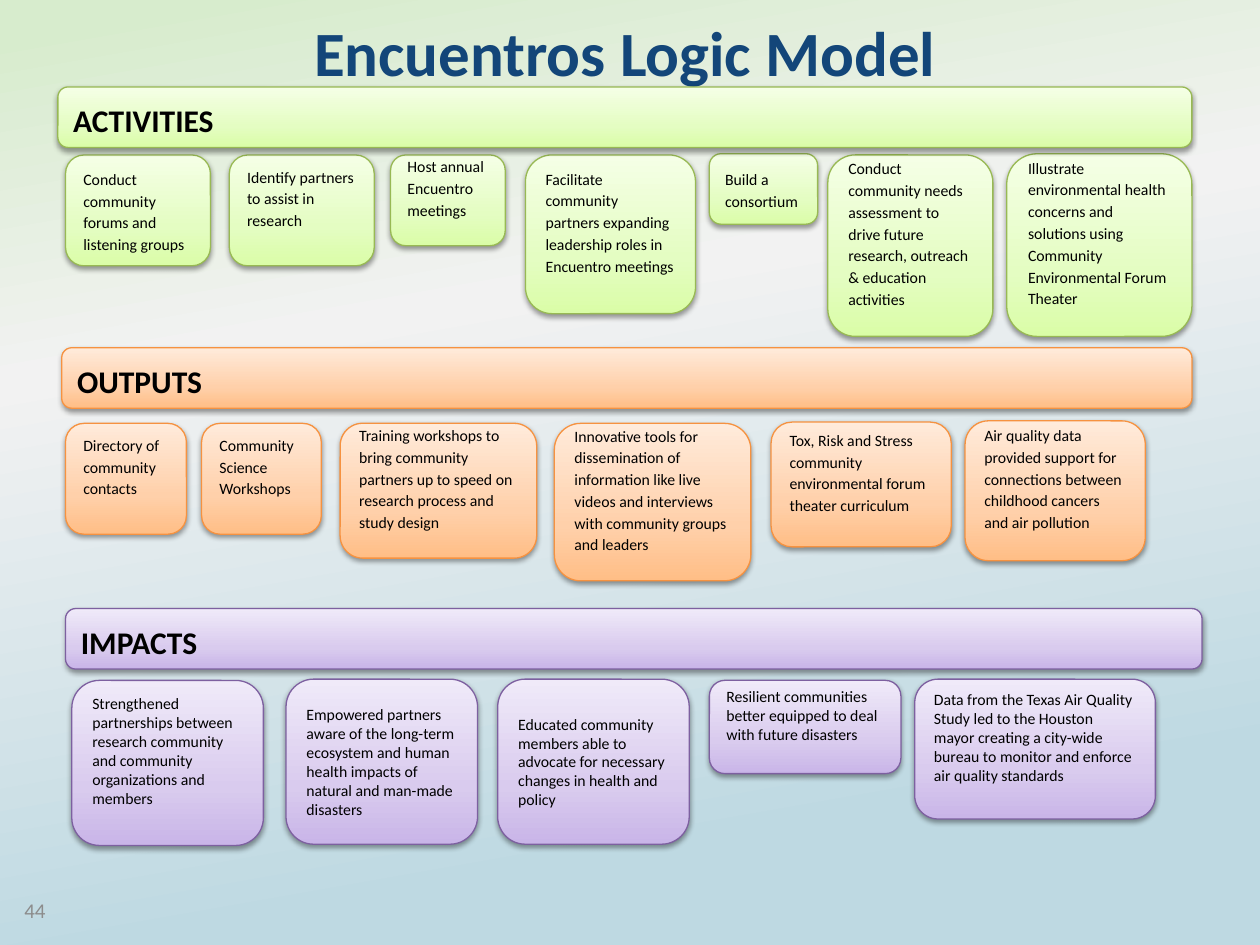
from lxml import etree
from pptx import Presentation
from pptx.dml.color import RGBColor
from pptx.enum.shapes import MSO_SHAPE
from pptx.enum.text import MSO_ANCHOR, PP_ALIGN
from pptx.oxml.ns import qn
from pptx.util import Inches, Pt

ROUNDED = MSO_SHAPE.ROUNDED_RECTANGLE
MIDDLE = MSO_ANCHOR.MIDDLE
LEFT, CENTER, RIGHT = PP_ALIGN.LEFT, PP_ALIGN.CENTER, PP_ALIGN.RIGHT

THEME = {
    "font": "Calibri",
    "title": "134679", "number": "8C8C8C", "text": "000000", "shadow": "000000",
    "title_size": 36, "heading_size": 18, "card_size": 9, "number_size": 12,
    "backdrop": [(3, "D7ECCD"), (33, "F2F2F2"), (83, "BED9E2")],
    "green": {"fill": [(0, "DAFDA7"), (35, "E4FDC2"), (100, "F5FFE6")], "line": "98B954"},
    "orange": {"fill": [(0, "FFBE86"), (35, "FFD0AA"), (100, "FFEBDB")], "line": "F69240"},
    "purple": {"fill": [(0, "C9B5E8"), (35, "D9CBEE"), (100, "F0EAF9")], "line": "7D60A0"},
}
INSET = 0.05
HEADING_HEIGHT = 0.48
CORNER = 0.167

TITLE = "Encuentros Logic Model"
PAGE_NUMBER = "44"

# Each card: text, left, top, width, height, extra room below the text
SECTIONS = [
    {"heading": "ACTIVITIES", "at": (0.46, 0.69, 9), "palette": "green", "spacing": 1.15, "cards": [
        ("Conduct community forums and listening groups", 0.52, 1.23, 1.15, 0.88, 0),
        ("Identify partners to assist in research", 1.82, 1.23, 1.15, 0.88, 0.21),
        ("Host annual Encuentro meetings", 3.1, 1.23, 0.91, 0.72, 0.21),
        ("Facilitate community partners expanding leadership roles in Encuentro meetings",
         4.17, 1.23, 1.35, 1.26, 0.21),
        ("Build a consortium", 5.63, 1.22, 0.86, 0.56, 0),
        ("Conduct community needs assessment to drive future research, outreach & education activities",
         6.57, 1.23, 1.31, 1.44, 0.21),
        ("Illustrate environmental health concerns and solutions using Community "
         "Environmental Forum Theater", 7.99, 1.22, 1.47, 1.45, 0.21),
    ]},
    {"heading": "OUTPUTS", "at": (0.49, 2.76, 8.97), "palette": "orange", "spacing": 1.15, "cards": [
        ("Directory of community contacts", 0.52, 3.36, 0.96, 0.88, 0.21),
        ("Community Science Workshops", 1.6, 3.36, 0.95, 0.88, 0.21),
        ("Training workshops to bring community partners up to speed on research process "
         "and study design", 2.7, 3.36, 1.56, 1.07, 0.21),
        ("Innovative tools for dissemination of information like live videos and interviews "
         "with community groups and leaders", 4.4, 3.36, 1.56, 1.25, 0.21),
        ("Tox, Risk and Stress community environmental forum theater curriculum",
         6.12, 3.35, 1.43, 0.99, 0.21),
        ("Air quality data provided support for connections between childhood cancers "
         "and air pollution", 7.66, 3.34, 1.43, 1.11, 0.21),
    ]},
    {"heading": "IMPACTS", "at": (0.52, 4.83, 9.02), "palette": "purple", "spacing": 1, "cards": [
        ("Strengthened partnerships between research community and community organizations "
         "and members", 0.57, 5.4, 1.52, 1.31, 0.19),
        ("Empowered partners aware of the long-term ecosystem and human health impacts of "
         "natural and man-made disasters", 2.27, 5.39, 1.52, 1.31, 0),
        ("Educated community members able to advocate for necessary changes in health and policy",
         3.95, 5.39, 1.52, 1.31, 0),
        ("Resilient communities better equipped to deal with future disasters",
         5.63, 5.4, 1.52, 0.74, 0.19),
        ("Data from the Texas Air Quality Study led to the Houston mayor creating a city-wide "
         "bureau to monitor and enforce air quality standards", 7.26, 5.39, 1.91, 1.11, 0.19),
    ]},
]


def add_child(parent, tag, **attributes):
    child = etree.SubElement(parent, qn(tag))
    for name, value in attributes.items():
        child.set(name, str(value))
    return child


def paint_gradient(fill, element, stops, angle):
    fill.gradient()
    gradient = element.find(".//" + qn("a:gradFill"))
    for child in list(gradient):
        gradient.remove(child)
    stop_list = add_child(gradient, "a:gsLst")
    for position, color in stops:
        stop = add_child(stop_list, "a:gs", pos=position * 1000)
        add_child(stop, "a:srgbClr", val=color)
    add_child(gradient, "a:lin", ang=angle * 60000, scaled=0)


def add_shadow(shape):
    shape.shadow.inherit = False
    effects = shape._element.spPr.find(qn("a:effectLst"))
    shadow = add_child(effects, "a:outerShdw", blurRad=Pt(3.1), dist=Pt(1.6),
                       dir=90 * 60000, rotWithShape=0)
    color = add_child(shadow, "a:srgbClr", val=THEME["shadow"])
    add_child(color, "a:alpha", val=38000)


def write(box, text, size, color=THEME["text"], bold=False, align=LEFT,
          spacing=1, room_below=0):
    frame = box.text_frame
    frame.word_wrap = True
    frame.vertical_anchor = MIDDLE
    frame.margin_left = frame.margin_right = Inches(2 * INSET)
    frame.margin_top = Inches(INSET)
    frame.margin_bottom = Inches(INSET + room_below)
    para = frame.paragraphs[0]
    para.alignment = align
    para.line_spacing = spacing
    span = para.add_run()
    span.text = text
    span.font.name = THEME["font"]
    span.font.size = Pt(size)
    span.font.bold = bold
    span.font.color.rgb = RGBColor.from_string(color)


def add_panel(page, place, palette, text, size, **text_format):
    panel = page.shapes.add_shape(ROUNDED, *map(Inches, place))
    panel.adjustments[0] = CORNER
    paint_gradient(panel.fill, panel._element.spPr, palette["fill"], 270)
    panel.line.color.rgb = RGBColor.from_string(palette["line"])
    panel.line.width = Pt(0.75)
    add_shadow(panel)
    write(panel, text, size, **text_format)
    return panel


def main():
    deck = Presentation()
    deck.slide_width, deck.slide_height = Inches(10), Inches(7.5)
    page = deck.slides.add_slide(deck.slide_layouts[5])
    paint_gradient(page.background.fill, page._element, THEME["backdrop"], 80)

    title = page.shapes.title
    title.left, title.top, title.width, title.height = map(Inches, (0.46, 0.01, 9, 0.8))
    write(title, TITLE, THEME["title_size"], color=THEME["title"], bold=True, align=CENTER)

    for section in SECTIONS:
        palette = THEME[section["palette"]]
        for text, left, top, width, height, room_below in section["cards"]:
            add_panel(page, (left, top, width, height), palette, text, THEME["card_size"],
                      spacing=section["spacing"], room_below=room_below)
        add_panel(page, (*section["at"], HEADING_HEIGHT), palette, section["heading"],
                  THEME["heading_size"], bold=True, spacing=1.15)

    number = page.shapes.add_textbox(*map(Inches, (0, 7.03, 0.46, 0.39)))
    write(number, PAGE_NUMBER, THEME["number_size"], color=THEME["number"], align=RIGHT)
    deck.save("out.pptx")


if __name__ == "__main__":
    main()
